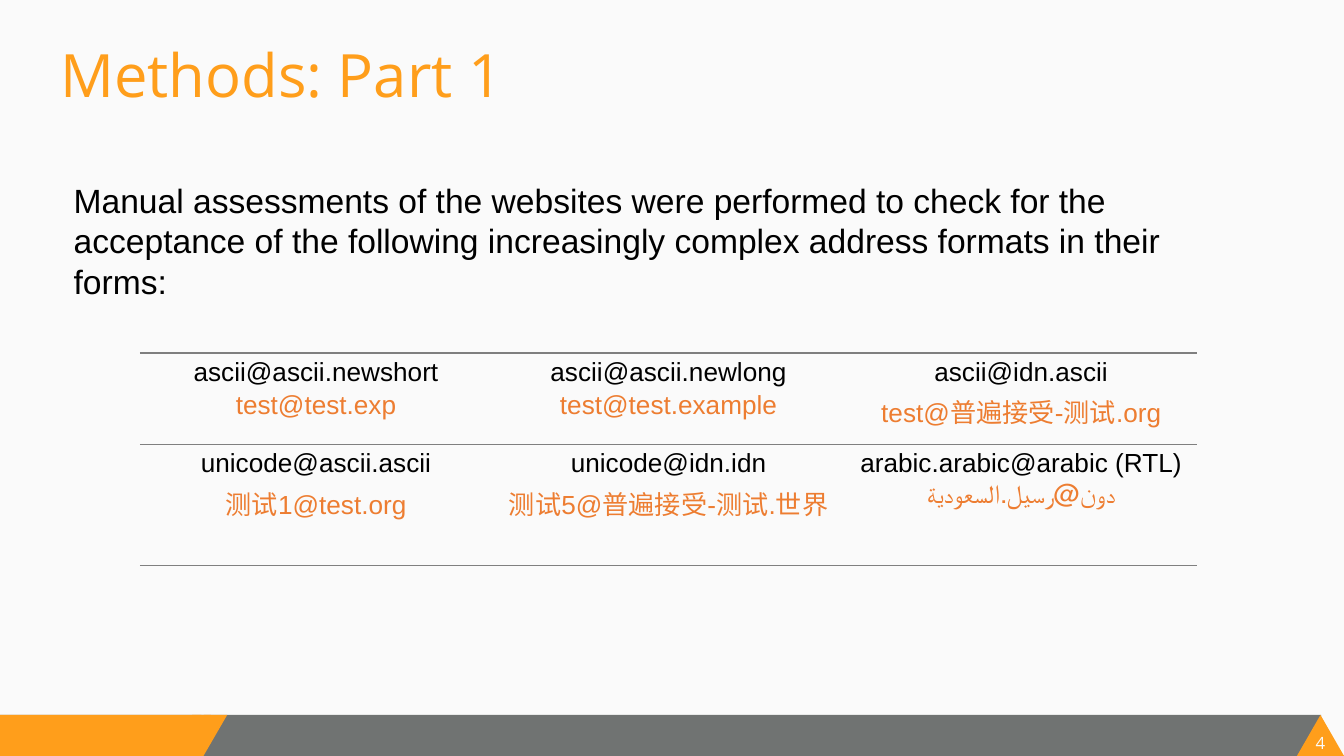
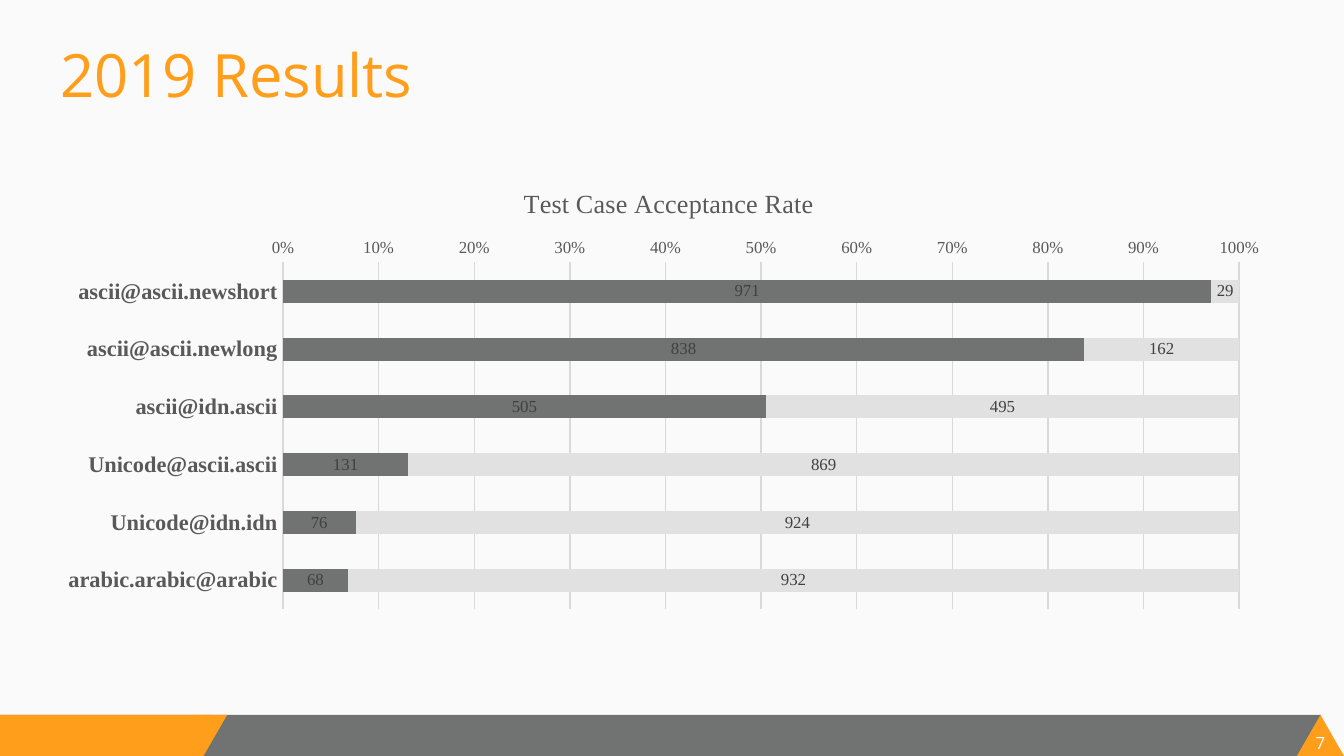
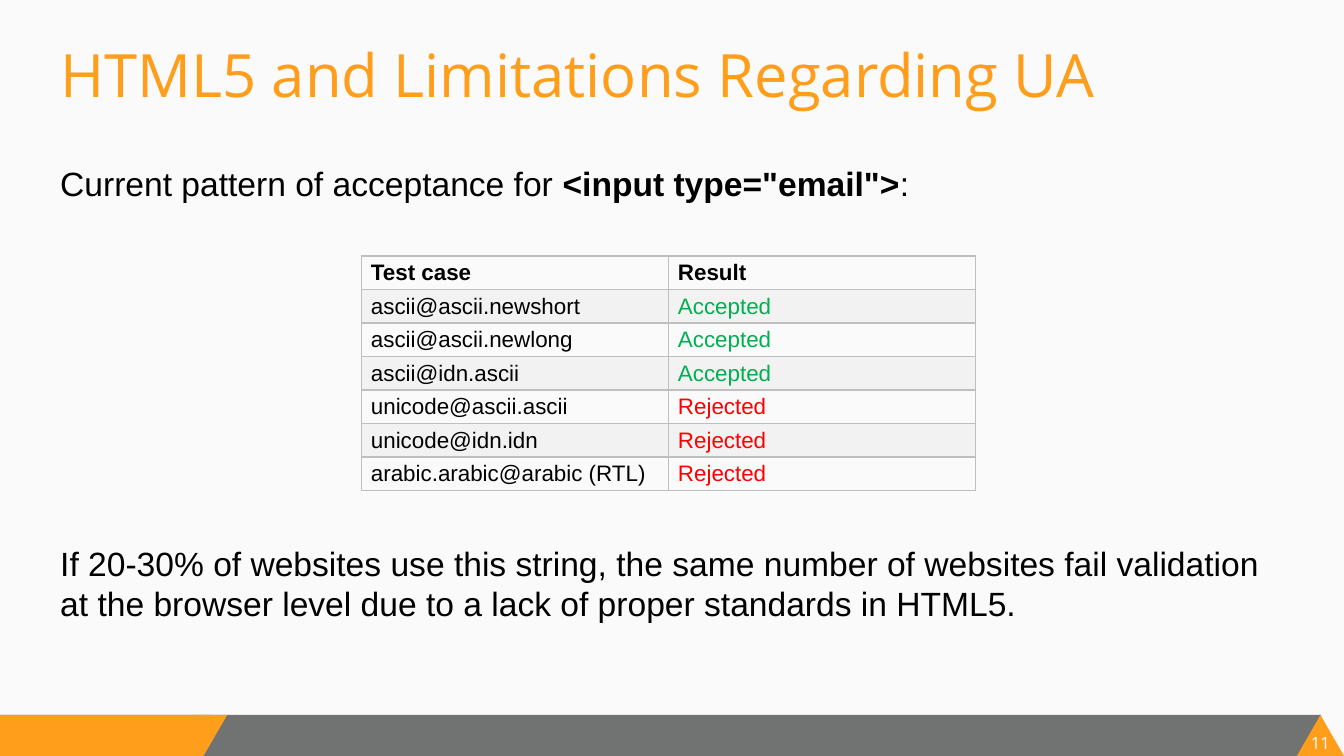
"""Build three slides on the acceptance of internationalised e-mail addresses."""
from lxml import etree
from pptx import Presentation
from pptx import util as u
from pptx.chart.data import CategoryChartData
from pptx.dml.color import RGBColor
from pptx.enum import chart as charts, shapes, text
from pptx.oxml.ns import qn

WIDTH, HEIGHT = u.Inches(10), u.Inches(5.625)
PAPER, GREY, ORANGE, BLACK = "FAFAFA", "707372", "FF9E1B", "000000"
EXAMPLE, AXIS_TEXT, LABEL, GRID = "ED7D31", "595959", "404040", "D9D9D9"
STRIPE, RULE, CELL_LINE, PALE = "F2F2F2", "7F7F7F", "BFBFBF", "E1E1E1"
HEADING_FONT, BODY_FONT, CHART_FONT = "Open Sans", "Arial", "Times New Roman"
CJK_FONTS = {
    "普遍接受": "Noto Sans CJK JP",
    "世界": "Noto Sans CJK JP",
    "测试": "Noto Sans CJK TC",
}
RESULT_COLOURS = {"Accepted": "00B050", "Rejected": "FF0000"}

BAND_TOP, BAND_HEIGHT = 94.58, 5.42
TITLE_AREA = (3.5, 4.09, 92.4, 16.71)
FORMAT_ROWS = [12.1, 16]
RESULT_ROW = 4.44

METHOD_TEXT = (
    "Manual assessments of the websites were performed to check for the acceptance "
    "of the following increasingly complex address formats in their forms:"
)
ADDRESS_FORMATS = [
    [
        ("ascii@ascii.newshort", ["test@test.exp"]),
        ("ascii@ascii.newlong", ["test@test.example"]),
        ("ascii@idn.ascii", ["test@", "普遍接受", "-", "测试", ".org"]),
    ],
    [
        ("unicode@ascii.ascii", ["测试", "1@test.org"]),
        ("unicode@idn.idn", ["测试", "5@", "普遍接受", "-", "测试", ".", "世界"]),
        ("arabic.arabic@arabic (RTL)", ["دون@رسيل.السعودية"]),
    ],
]
ACCEPTANCE = {
    "ascii@ascii.newshort": (971, 29),
    "ascii@ascii.newlong": (838, 162),
    "ascii@idn.ascii": (505, 495),
    "Unicode@ascii.ascii": (131, 869),
    "Unicode@idn.idn": (76, 924),
    "arabic.arabic@arabic": (68, 932),
}
SERIES = [("Series 1", GREY), ("Series 2", PALE)]
PATTERN_TEXT = [("Current pattern of acceptance for ", False), ('<input type="email">', True), (":", False)]
HTML_RESULTS = [
    ("Test case", "Result"),
    ("ascii@ascii.newshort", "Accepted"),
    ("ascii@ascii.newlong", "Accepted"),
    ("ascii@idn.ascii", "Accepted"),
    ("unicode@ascii.ascii", "Rejected"),
    ("unicode@idn.idn", "Rejected"),
    ("arabic.arabic@arabic (RTL)", "Rejected"),
]
CONCLUSION = (
    "If 20-30% of websites use this string, the same number of websites fail validation "
    "at the browser level due to a lack of proper standards in HTML5."
)


def colour(hex_string):
    return RGBColor.from_string(hex_string)


def place(left, top, width, height):
    """Turn percentages of the slide into lengths."""
    return [int(share * side / 100) for share, side in
            zip((left, top, width, height), (WIDTH, HEIGHT, WIDTH, HEIGHT))]


def style_font(font, size, hex_string, name=BODY_FONT, bold=False):
    font.size, font.name, font.bold = u.Pt(size), name, bold
    font.color.rgb = colour(hex_string)


def add_run(paragraph, words, size, hex_string, name=BODY_FONT, bold=False):
    run = paragraph.add_run()
    run.text = words
    style_font(run.font, size, hex_string, name, bold)
    if words in CJK_FONTS:
        east_asian = etree.SubElement(run._r.get_or_add_rPr(), qn("a:ea"))
        east_asian.set("typeface", name)


def add_text(slide, area):
    """Add an empty wrapping text box and return its first paragraph."""
    frame = slide.shapes.add_textbox(*place(*area)).text_frame
    frame.word_wrap = True
    return frame.paragraphs[0]


def add_block(slide, kind, area, fill):
    shape = slide.shapes.add_shape(kind, *place(*area))
    shape.shadow.inherit = False
    shape.fill.solid()
    shape.fill.fore_color.rgb = colour(fill)
    shape.line.fill.background()
    return shape


def add_slide(presentation, title, number):
    """Add a slide with its background, footer band, page number and title."""
    slide = presentation.slides.add_slide(presentation.slide_layouts[6])
    slide.background.fill.solid()
    slide.background.fill.fore_color.rgb = colour(PAPER)
    kinds = shapes.MSO_SHAPE
    for kind, left, width, fill in [
        (kinds.RECTANGLE, 0, 98.3, GREY),
        (kinds.RECTANGLE, 0, 15, ORANGE),
        (kinds.ISOSCELES_TRIANGLE, 96.5, 3.5, ORANGE),
    ]:
        add_block(slide, kind, (left, BAND_TOP, width, BAND_HEIGHT), fill)
    page = add_text(slide, (97.4, 96.89, 1.7, 2.67))
    frame = slide.shapes[-1].text_frame
    frame.word_wrap = False
    frame.margin_left = frame.margin_right = frame.margin_top = frame.margin_bottom = 0
    page.alignment = text.PP_ALIGN.CENTER
    add_run(page, str(number), 9, PAPER, HEADING_FONT)
    slant = add_block(slide, kinds.PARALLELOGRAM, (13.4, BAND_TOP, 3.5, BAND_HEIGHT), ORANGE)
    slant.rotation = 180
    slant.adjustments[0] = 0.58
    add_block(slide, kinds.RECTANGLE, (14.3, BAND_TOP, 1.4, 1.07), ORANGE)
    add_run(add_text(slide, TITLE_AREA), title, 32, ORANGE, HEADING_FONT)
    return slide


def set_borders(cell, lines):
    """Draw the given sides of a cell and hide the others."""
    properties = cell._tc.get_or_add_tcPr()
    for position, side in enumerate("LRTB"):
        line = etree.Element(qn(f"a:ln{side}"), w=str(u.Pt(1)))
        if side in lines:
            fill = etree.SubElement(line, qn("a:solidFill"))
            etree.SubElement(fill, qn("a:srgbClr"), val=lines[side])
        else:
            etree.SubElement(line, qn("a:noFill"))
        properties.insert(position, line)


def add_table(slide, corner, width, row_shares, columns, lines, margin):
    """Add a plain table with equal columns and rows of the given heights."""
    frame = slide.shapes.add_table(len(row_shares), columns,
                                   *place(*corner, width, sum(row_shares)))
    table = frame.table
    table.first_row = table.horz_banding = False
    for column in table.columns:
        column.width = frame.width // columns
    for row, share in zip(table.rows, row_shares):
        row.height = int(HEIGHT * share / 100)
    for cell in table.iter_cells():
        cell.margin_left = cell.margin_right = u.Inches(margin)
        cell.margin_top = cell.margin_bottom = 0
        cell.fill.background()
        set_borders(cell, lines)
    return table


def set_layout(parent, inner=False, **shares):
    """Fix the place of a chart part by shares of the chart."""
    layout = parent.find(qn("c:layout"))
    if layout is None:
        layout = etree.Element(qn("c:layout"))
        parent.insert(0, layout)
    manual = etree.SubElement(layout, qn("c:manualLayout"))
    if inner:
        etree.SubElement(manual, qn("c:layoutTarget"), val="inner")
    for axis in "xy":
        etree.SubElement(manual, qn(f"c:{axis}Mode"), val="edge")
    for key, share in shares.items():
        etree.SubElement(manual, qn(f"c:{key}"), val=str(share))


def build_methods(presentation):
    slide = add_slide(presentation, "Methods: Part 1", 4)
    paragraph = add_text(slide, (3.5, 22.93, 85.6, 21.16))
    paragraph._p.get_or_add_pPr().set("marL", str(u.Inches(0.1)))
    add_run(paragraph, METHOD_TEXT, 18, BLACK)
    table = add_table(slide, (10.4, 46.7), 78.7, FORMAT_ROWS, len(ADDRESS_FORMATS[0]),
                      {"T": RULE, "B": RULE}, 0.09)
    for row, formats in enumerate(ADDRESS_FORMATS):
        for column, (pattern, example) in enumerate(formats):
            frame = table.cell(row, column).text_frame
            heading, sample = frame.paragraphs[0], frame.add_paragraph()
            for paragraph in (heading, sample):
                paragraph.alignment = text.PP_ALIGN.CENTER
                paragraph.line_spacing = 1.15
            add_run(heading, pattern, 14, BLACK)
            for part in example:
                add_run(sample, part, 14, EXAMPLE, CJK_FONTS.get(part, BODY_FONT))


def build_results(presentation):
    slide = add_slide(presentation, "2019 Results", 7)
    data = CategoryChartData()
    data.categories = list(ACCEPTANCE)
    for (name, _), values in zip(SERIES, zip(*ACCEPTANCE.values())):
        data.add_series(name, values)
    chart = slide.shapes.add_chart(charts.XL_CHART_TYPE.BAR_STACKED_100,
                                   *place(3.5, 22.22, 92.4, 59.56), data).chart
    style_font(chart.font, 10, BLACK, CHART_FONT)
    chart.has_legend = False
    chart.has_title = True
    add_run(chart.chart_title.text_frame.paragraphs[0], "Test Case Acceptance Rate",
            14, AXIS_TEXT, CHART_FONT)
    set_layout(chart.chart_title._element, x=0.38, y=0.03)
    set_layout(chart._chartSpace.chart.plotArea, True, x=0.19, y=0.21, w=0.77, h=0.77)

    categories, values = chart.category_axis, chart.value_axis
    for axis, size, bold in [(categories, 12, True), (values, 9, False)]:
        axis.major_tick_mark = axis.minor_tick_mark = charts.XL_TICK_MARK.NONE
        style_font(axis.tick_labels.font, size, AXIS_TEXT, CHART_FONT, bold)
    categories.reverse_order = True
    values.format.line.fill.background()
    values.has_major_gridlines = True
    values.tick_labels.number_format = "0%"
    values.tick_labels.number_format_is_linked = False
    for thin in (categories.format.line, values.major_gridlines.format.line):
        thin.color.rgb = colour(GRID)
        thin.width = u.Pt(0.75)

    plot = chart.plots[0]
    plot.gap_width, plot.overlap = 150, 100
    plot.vary_by_categories = False
    for series, (_, fill) in zip(plot.series, SERIES):
        series.format.fill.solid()
        series.format.fill.fore_color.rgb = colour(fill)
        labels = series.data_labels
        labels.show_value = True
        labels.position = charts.XL_LABEL_POSITION.CENTER
        style_font(labels.font, 9, LABEL, CHART_FONT)


def build_limitations(presentation):
    slide = add_slide(presentation, "HTML5 and Limitations Regarding UA", 11)
    table = add_table(slide, (26.9, 33.85), 45.7, [RESULT_ROW] * len(HTML_RESULTS),
                      len(HTML_RESULTS[0]), dict.fromkeys("LRTB", CELL_LINE), 0.07)
    for row, entries in enumerate(HTML_RESULTS):
        for column, words in enumerate(entries):
            cell = table.cell(row, column)
            cell.vertical_anchor = text.MSO_ANCHOR.MIDDLE
            if row % 2:
                cell.fill.solid()
                cell.fill.fore_color.rgb = colour(STRIPE)
            add_run(cell.text_frame.paragraphs[0], words, 12,
                    RESULT_COLOURS.get(words, BLACK), bold=row == 0)
    pattern = add_text(slide, (3.5, 20.62, 92.4, 7.11))
    for words, bold in PATTERN_TEXT:
        add_run(pattern, words, 18, BLACK, bold=bold)
    add_run(add_text(slide, (3.5, 70.93, 92.4, 12.62)), CONCLUSION, 18, BLACK)


def main():
    presentation = Presentation()
    presentation.slide_width, presentation.slide_height = WIDTH, HEIGHT
    build_methods(presentation)
    build_results(presentation)
    build_limitations(presentation)
    presentation.save("out.pptx")


if __name__ == "__main__":
    main()
